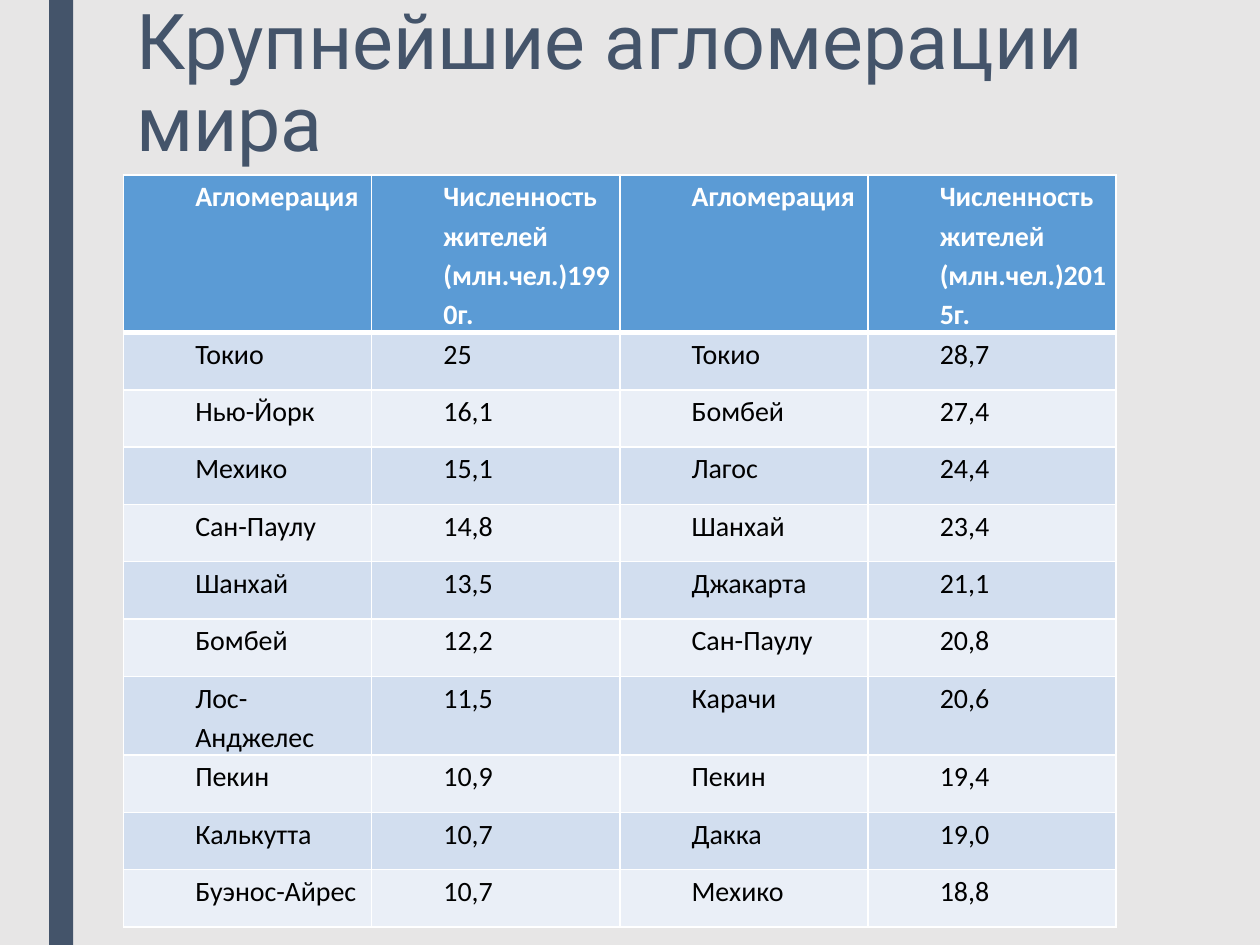
"""Builds a slide with a table of the world's largest urban agglomerations."""
from lxml import etree
from pptx import Presentation
from pptx import util as u
from pptx.dml.color import RGBColor
from pptx.enum import shapes, text
from pptx.oxml import ns


def paint(target, color):
    target.solid()
    target.fore_color.rgb = RGBColor.from_string(color)


def add_border(cell, position, side, points):
    line = etree.Element(ns.qn(f"a:ln{side}"), w=str(u.Pt(points)))
    fill = etree.SubElement(line, ns.qn("a:solidFill"))
    etree.SubElement(fill, ns.qn("a:srgbClr"), val="FFFFFF")
    cell._tc.get_or_add_tcPr().insert(position, line)


presentation = Presentation()
presentation.slide_width = u.Inches(10)
presentation.slide_height = u.Inches(7.5)
slide = presentation.slides.add_slide(presentation.slide_layouts[5])
paint(slide.background.fill, "E7E6E6")

side_bar = slide.shapes.add_shape(
    shapes.MSO_SHAPE.RECTANGLE, u.Inches(0.39), 0, u.Inches(0.19), u.Inches(7.5))
side_bar.shadow.inherit = False
paint(side_bar.fill, "44546A")
side_bar.line.fill.background()

title = slide.shapes.title
title.left, title.top = u.Inches(0.98), u.Inches(-0.02)
title.width, title.height = u.Inches(7.88), u.Inches(1.62)
title.text_frame.word_wrap = True
title.text_frame.auto_size = text.MSO_AUTO_SIZE.NONE
title.text_frame.vertical_anchor = text.MSO_ANCHOR.TOP
paragraph = title.text_frame.paragraphs[0]
paragraph.alignment = text.PP_ALIGN.LEFT
paragraph.line_spacing = 0.89
run = paragraph.add_run()
run.text = "Крупнейшие агломерации мира"
run.font.name = "Roboto"
run.font.size = u.Pt(44)
paint(run.font.fill, "44546A")

rows = [
    ("Агломерация", "Численность жителей (млн.чел.)1990г.",
     "Агломерация", "Численность жителей (млн.чел.)2015г."),
    ("Токио", "25", "Токио", "28,7"),
    ("Нью-Йорк", "16,1", "Бомбей", "27,4"),
    ("Мехико", "15,1", "Лагос", "24,4"),
    ("Сан-Паулу", "14,8", "Шанхай", "23,4"),
    ("Шанхай", "13,5", "Джакарта", "21,1"),
    ("Бомбей", "12,2", "Сан-Паулу", "20,8"),
    ("Лос-Анджелес", "11,5", "Карачи", "20,6"),
    ("Пекин", "10,9", "Пекин", "19,4"),
    ("Калькутта", "10,7", "Дакка", "19,0"),
    ("Буэнос-Айрес", "10,7", "Мехико", "18,8"),
]
header_height, body_height = u.Inches(0.9), u.Inches(4.55)
table = slide.shapes.add_table(
    len(rows), 4, u.Inches(0.98), u.Inches(1.39),
    u.Inches(7.88), header_height + body_height).table

for row_index, values in enumerate(rows):
    is_header = row_index == 0
    table.rows[row_index].height = (
        header_height if is_header else body_height // (len(rows) - 1))
    row_color = "5B9BD5" if is_header else ("EAEFF7", "D2DEEF")[row_index % 2]
    borders = {"L": 1, "R": 1, "T": 3 if row_index == 1 else 1,
               "B": 3 if is_header else 1}
    for column_index, value in enumerate(values):
        cell = table.cell(row_index, column_index)
        paint(cell.fill, row_color)
        for position, (side, points) in enumerate(borders.items()):
            add_border(cell, position, side, points)
        cell.margin_left = cell.margin_right = u.Inches(0.07)
        cell.margin_top = cell.margin_bottom = 0
        paragraph = cell.text_frame.paragraphs[0]
        paragraph.line_spacing = 1.15
        paragraph.space_after = u.Pt(10 if column_index == 3 else 0)
        properties = paragraph._p.get_or_add_pPr()
        properties.set("marL", str(u.Inches(0.5)))
        properties.set("indent", "0")
        run = paragraph.add_run()
        run.text = value
        run.font.name = "Calibri"
        run.font.size = u.Pt(16)
        run.font.bold = is_header
        paint(run.font.fill, "FFFFFF" if is_header else "000000")

presentation.save("out.pptx")
